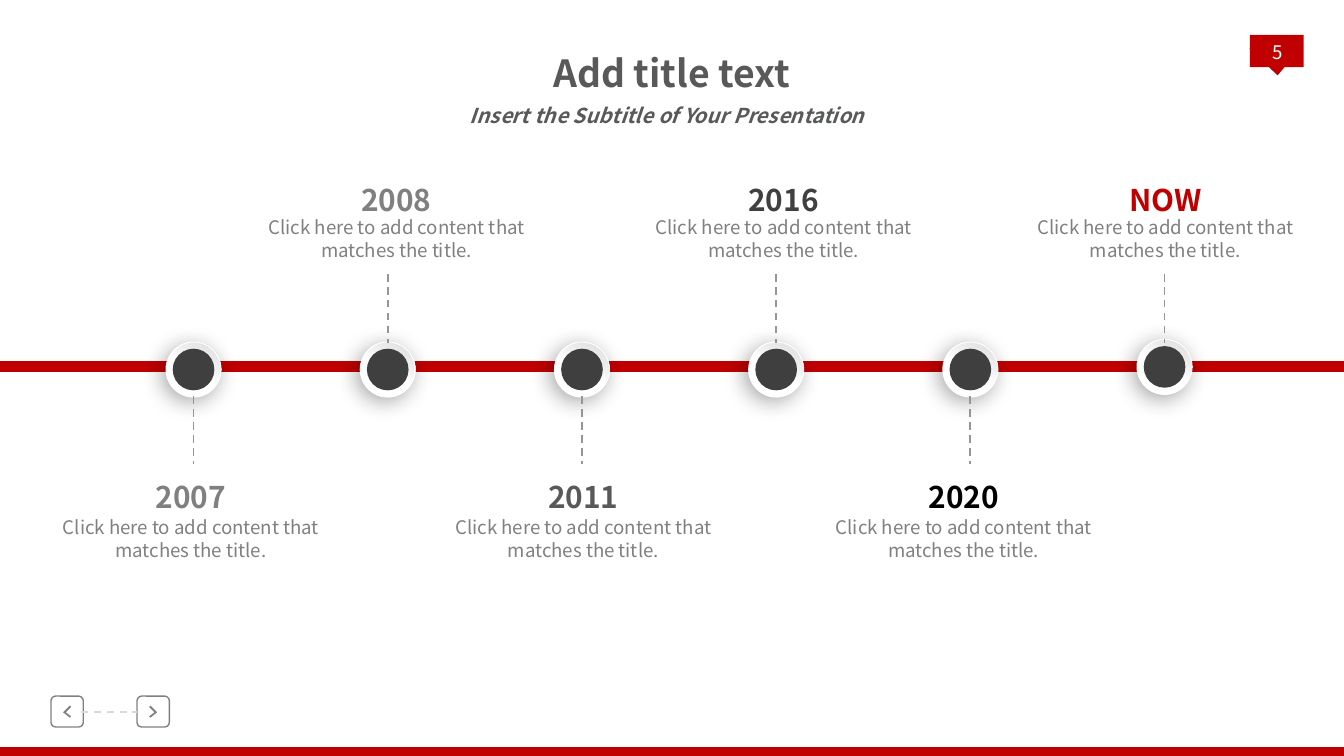
from lxml import etree
from pptx import Presentation
from pptx.dml.color import RGBColor
from pptx.enum.dml import MSO_LINE
from pptx.enum.shapes import MSO_CONNECTOR, MSO_SHAPE
from pptx.enum.text import MSO_ANCHOR, PP_ALIGN
from pptx.oxml import parse_xml
from pptx.oxml.ns import qn
from pptx.util import Inches, Pt

FONT = "Noto Sans CJK SC"
RED = "C00000"
GRAY = "808080"
SHADOW = (
    '<a:effectLst xmlns:a="http://schemas.openxmlformats.org/drawingml/2006/main">'
    '<a:outerShdw blurRad="152400" dist="38100" dir="8100000" algn="tr" rotWithShape="0">'
    '<a:srgbClr val="000000"><a:alpha val="34000"/></a:srgbClr>'
    '</a:outerShdw></a:effectLst>'
)

deck = Presentation()
deck.slide_width = Inches(10)
deck.slide_height = Inches(10) * 9 // 16
page = deck.slides.add_slide(deck.slide_layouts[6])
rgb = RGBColor.from_string


def add_text(text, left, top, width, height, size=10, color=GRAY, bold=False,
             italic=False, wrap=True, anchor=MSO_ANCHOR.TOP, margins=(0, 0, 0, 0)):
    box = page.shapes.add_textbox(Inches(left), Inches(top), Inches(width), Inches(height))
    frame = box.text_frame
    frame.word_wrap = wrap
    frame.vertical_anchor = anchor
    frame.margin_left, frame.margin_top, frame.margin_right, frame.margin_bottom = map(Inches, margins)
    para = frame.paragraphs[0]
    para.alignment = PP_ALIGN.CENTER
    span = para.add_run()
    span.text = text
    span.font.name = FONT
    span.font.size = Pt(size)
    span.font.bold = bold
    span.font.italic = italic
    span.font.color.rgb = rgb(color)


def add_line(x1, y1, x2, y2, color, width=1, dashed=True):
    line = page.shapes.add_connector(
        MSO_CONNECTOR.STRAIGHT, Inches(x1), Inches(y1), Inches(x2), Inches(y2))
    line.line.color.rgb = rgb(color)
    line.line.width = Pt(width)
    if dashed:
        line.line.dash_style = MSO_LINE.DASH
    etree.SubElement(line._element.spPr, qn("a:effectLst"))


for kind, left, top, width, height, turn in [
    (MSO_SHAPE.RECTANGLE, 0, 5.56, 10, 0.07, 0),
    (MSO_SHAPE.RECTANGLE, 9.3, 0.26, 0.4, 0.24, 0),
    (MSO_SHAPE.ISOSCELES_TRIANGLE, 9.3, 0.35, 0.4, 0.21, 176.8),
]:
    block = page.shapes.add_shape(kind, Inches(left), Inches(top), Inches(width), Inches(height))
    block.shadow.inherit = False
    block.fill.solid()
    block.fill.fore_color.rgb = rgb(RED)
    block.line.fill.background()
    block.rotation = turn
add_text("5", 9.32, 0.22, 0.37, 0.38, color="FFFFFF", anchor=MSO_ANCHOR.MIDDLE,
         margins=(0, 0, 0, 0.05))

for center, side in [(0.5, 1), (1.14, -1)]:
    button = page.shapes.add_shape(MSO_SHAPE.ROUNDED_RECTANGLE, Inches(center - 0.12),
                                   Inches(5.18), Inches(0.24), Inches(0.23))
    button.adjustments[0] = 0.15
    button.shadow.inherit = False
    button.fill.background()
    button.line.color.rgb = rgb(GRAY)
    button.line.width = Pt(0.75)
    points = [(Inches(center + side * x), Inches(y)) for x, y in [
        (0.02, 5.25), (-0.03, 5.3), (0.02, 5.34), (0.03, 5.33), (-0.01, 5.3), (0.03, 5.26)]]
    builder = page.shapes.build_freeform(*points[0])
    builder.add_line_segments(points[1:], close=True)
    chevron = builder.convert_to_shape()
    chevron.shadow.inherit = False
    chevron.fill.solid()
    chevron.fill.fore_color.rgb = rgb(GRAY)
    chevron.line.fill.background()
add_line(0.6, 5.3, 1.02, 5.3, "D9D9D9")

add_text("Add title text", 3.9, 0.37, 2.2, 0.34, size=20, color="595959", bold=True)
add_text("Insert the Subtitle of Your Presentation", 3.34, 0.72, 3.25, 0.29, size=11,
         color="58595B", bold=True, italic=True, wrap=False, margins=(0.1, 0.05, 0.1, 0.05))

add_line(0, 2.73, 10, 2.73, RED, width=6, dashed=False)

milestones = [
    ("2007", 0.43, GRAY, 2.75),
    ("2008", 1.96, GRAY, 2.75),
    ("2011", 3.35, "595959", 2.75),
    ("2016", 4.84, "404040", 2.75),
    ("2020", 6.18, "000000", 2.75),
    ("NOW", 7.68, RED, 2.73),
]
for index, (year, left, color, middle) in enumerate(milestones):
    above = index % 2 == 1
    year_top, body_top, stem_top, stem_end = (
        (1.35, 1.61, 2.04, 2.55) if above else (3.56, 3.84, 2.95, 3.45))
    add_text("Click here to add content that matches the title.", left, body_top, 1.98, 0.34)
    add_text(year, left, year_top, 1.98, 0.27, size=16, color=color, bold=True)

    center = 1.44 + 8.67 / 6 * index
    for size in (0.41, 0.31):
        disc = page.shapes.add_shape(MSO_SHAPE.OVAL, Inches(center - size / 2),
                                     Inches(middle - size / 2), Inches(size), Inches(size))
        if size == 0.41:
            disc.fill.gradient()
            disc.fill.gradient_angle = 60
            for stop, (position, shade) in zip(disc.fill.gradient_stops,
                                               [(0.45, "FFFFFF"), (1, "D9D9D9")]):
                stop.position = position
                stop.color.rgb = rgb(shade)
            disc.line.color.rgb = rgb("FFFFFF")
            disc.line.width = Pt(0.5)
            disc._element.spPr.append(parse_xml(SHADOW))
        else:
            disc.shadow.inherit = False
            disc.fill.solid()
            disc.fill.fore_color.rgb = rgb("3F3F3F")
            disc.line.fill.background()
    add_line(center, stem_top, center, stem_end, "969696")

deck.save("out.pptx")
